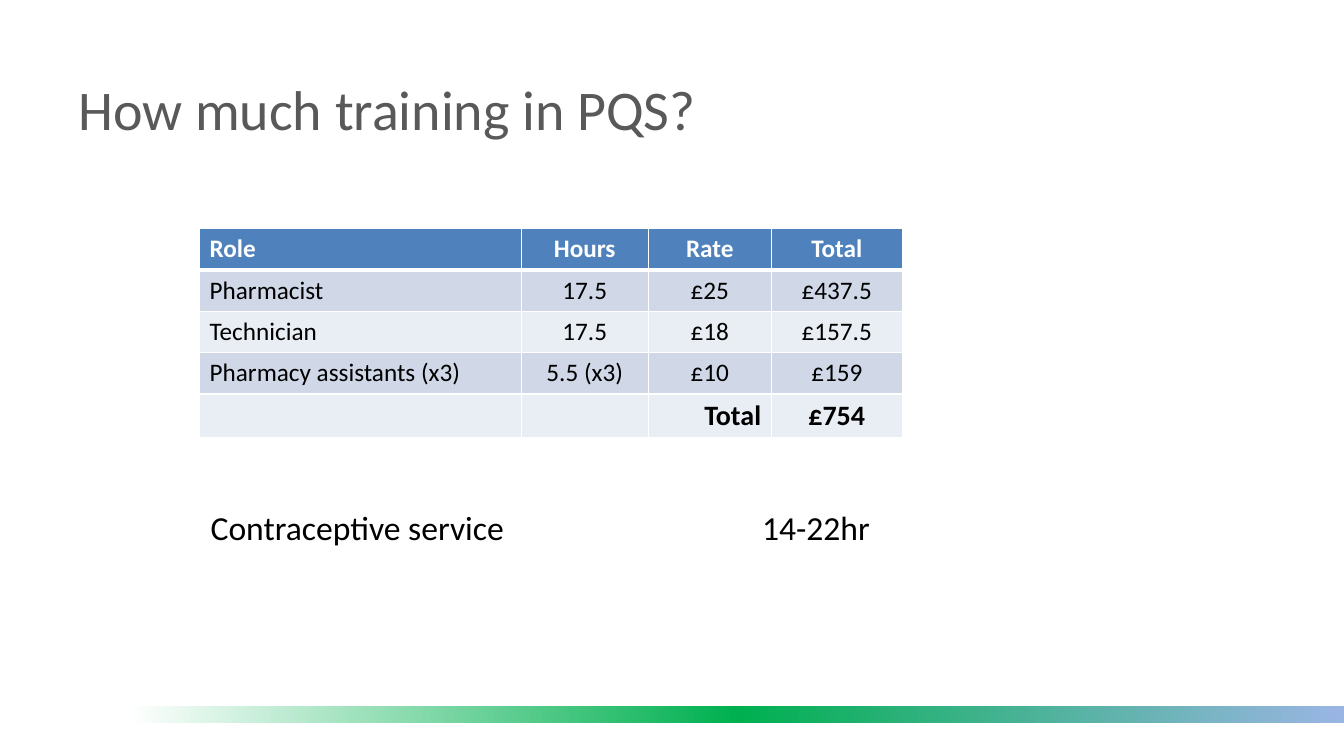
from lxml import etree
from pptx import Presentation
from pptx.dml.color import RGBColor
from pptx.enum.shapes import MSO_SHAPE
from pptx.enum.text import MSO_ANCHOR, PP_ALIGN
from pptx.oxml import parse_xml
from pptx.oxml.ns import nsdecls, qn
from pptx.util import Inches, Pt

LEFT, CENTER, RIGHT = PP_ALIGN.LEFT, PP_ALIGN.CENTER, PP_ALIGN.RIGHT
MIDDLE, TOP = MSO_ANCHOR.MIDDLE, MSO_ANCHOR.TOP
FONT = "Calibri"
COLORS = {
    "title": "595959",
    "text": "000000",
    "white": "FFFFFF",
    "header": "4F81BD",
    "odd": "D0D8E8",
    "even": "E9EDF4",
    "bar_blue": "9AB5E4",
    "bar_green": "00B050",
}


def style(paragraph, size, color, bold=False, align=LEFT):
    paragraph.alignment = align
    font = paragraph.font
    font.name, font.size, font.bold = FONT, Pt(size), bold
    font.color.rgb = RGBColor.from_string(COLORS[color])


def add_text(left, top, width, height, text, anchor):
    box = slide.shapes.add_textbox(Inches(left), Inches(top), Inches(width), Inches(height))
    box.text_frame.word_wrap = True
    box.text_frame.vertical_anchor = anchor
    paragraph = box.text_frame.paragraphs[0]
    paragraph.text = text
    return paragraph


presentation = Presentation()
presentation.slide_width = Inches(13.33)
presentation.slide_height = Inches(7.5)
slide = presentation.slides.add_slide(presentation.slide_layouts[6])

# Gradient bar at the foot
bar = slide.shapes.add_shape(MSO_SHAPE.RECTANGLE, Inches(1.26), Inches(7), Inches(12.07), Inches(0.17))
bar.shadow.inherit = False
bar.line.fill.background()
bar.fill.gradient()
bar.fill.gradient_angle = 180
stops = bar._element.spPr.find(qn("a:gradFill")).find(qn("a:gsLst"))
for stop in list(stops):
    stops.remove(stop)
for position, color in ((0, "bar_blue"), (50, "bar_green"), (100, "white")):
    stop = etree.SubElement(stops, qn("a:gs"), pos=str(position * 1000))
    etree.SubElement(stop, qn("a:srgbClr"), val=COLORS[color])

# Title
title = add_text(0.68, 0.29, 10.79, 1.56, "How much training in PQS?", MIDDLE)
style(title, 40, "title")

# Training cost table
rows = [
    ("Role", "Hours", "Rate", "Total"),
    ("Pharmacist", "17.5", "£25", "£437.5"),
    ("Technician", "17.5", "£18", "£157.5"),
    ("Pharmacy assistants (x3)", "5.5 (x3)", "£10", "£159"),
    ("", "", "Total", "£754"),
]
column_widths = (3.19, 1.26, 1.22, 1.3)
last_row = len(rows) - 1
table = slide.shapes.add_table(
    len(rows), len(column_widths), Inches(1.98), Inches(2.27), Inches(6.97), Inches(2.05)
).table
for column, width in zip(table.columns, column_widths):
    column.width = Inches(width)

for row_index, row in enumerate(rows):
    table.rows[row_index].height = Inches(0.41)
    header, total = row_index == 0, row_index == last_row
    fill = "header" if header else ("odd" if row_index % 2 else "even")
    for column_index, text in enumerate(row):
        cell = table.cell(row_index, column_index)
        cell.fill.solid()
        cell.fill.fore_color.rgb = RGBColor.from_string(COLORS[fill])
        cell.text = text
        align = LEFT if column_index == 0 else CENTER
        if text == "Total" and total:
            align = RIGHT
        style(cell.text_frame.paragraphs[0], 20 if text and total else 18,
              "white" if header else "text", header or total, align)

        # White borders, thicker between header and body
        thick_side = {0: "lnB", 1: "lnT"}.get(row_index)
        for index, side in enumerate(("lnL", "lnR", "lnT", "lnB")):
            width = Pt(3 if side == thick_side else 1)
            cell._tc.get_or_add_tcPr().insert(index, parse_xml(
                f'<a:{side} {nsdecls("a")} w="{width}"><a:solidFill>'
                f'<a:srgbClr val="{COLORS["white"]}"/></a:solidFill></a:{side}>'))

# Contraceptive service line, hours set on a tab stop
service = add_text(1.99, 4.98, 6.91, 0.91, "Contraceptive service\t14-22hr", TOP)
tabs = etree.SubElement(service._p.get_or_add_pPr(), qn("a:tabLst"))
etree.SubElement(tabs, qn("a:tab"), pos=str(Inches(5.47)), algn="l")
style(service, 24, "text")

presentation.save("out.pptx")
